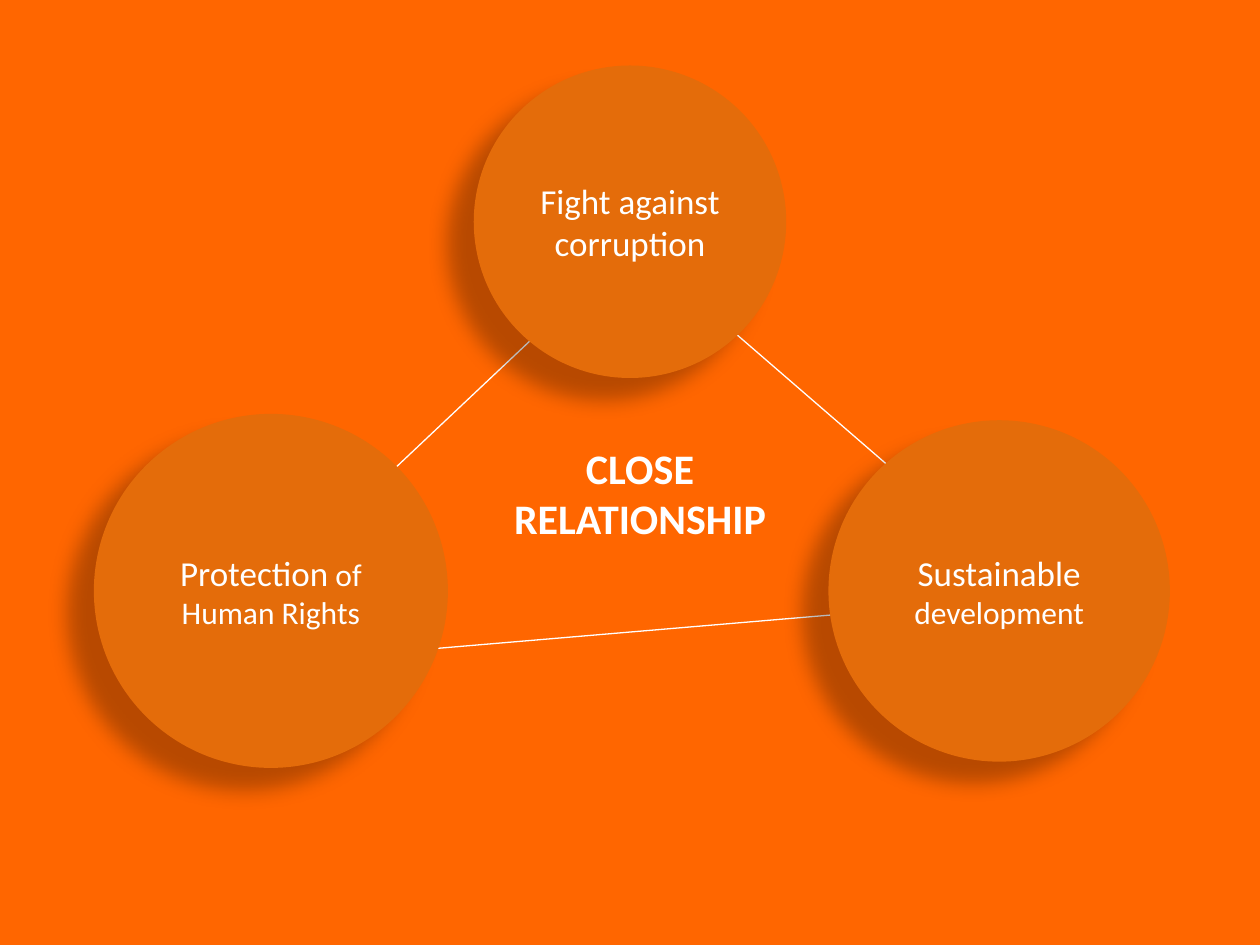
from lxml.etree import SubElement
from pptx import Presentation
from pptx.dml.color import RGBColor
from pptx.enum.shapes import MSO_CONNECTOR, MSO_SHAPE
from pptx.enum.text import MSO_ANCHOR, PP_ALIGN
from pptx.oxml.ns import qn
from pptx.util import Inches, Pt

BACKDROP = RGBColor(0xFF, 0x66, 0x00)
CIRCLE_FILL = RGBColor(0xE4, 0x6C, 0x0A)
WHITE = RGBColor(0xFF, 0xFF, 0xFF)
FONT = "Calibri"


def add_soft_shadow(shape):
    """Cast a blurred black shadow down and to the left."""
    effects = shape._element.spPr.find(qn("a:effectLst"))
    shadow = SubElement(effects, qn("a:outerShdw"), blurRad=str(Pt(11.8)),
                        dist=str(Pt(19.7)), dir=str(141 * 60000),
                        algn="ctr", rotWithShape="0")
    colour = SubElement(shadow, qn("a:srgbClr"), val="000000")
    SubElement(colour, qn("a:alpha"), val="28000")


def add_plain_shape(page, kind, left, top, width, height, fill=None):
    shape = page.shapes.add_shape(kind, left, top, width, height)
    shape.shadow.inherit = False
    shape.line.fill.background()
    if fill is None:
        shape.fill.background()
    else:
        shape.fill.solid()
        shape.fill.fore_color.rgb = fill
    return shape


def add_circle(page, centre, diameter, paragraphs, fill=None, bold=False):
    """Add a circle; each paragraph is a list of (text, size) spans."""
    left, top = (Inches(middle - diameter / 2) for middle in centre)
    circle = add_plain_shape(page, MSO_SHAPE.OVAL, left, top,
                             Inches(diameter), Inches(diameter), fill)
    frame = circle.text_frame
    frame.word_wrap = True
    frame.vertical_anchor = MSO_ANCHOR.MIDDLE
    for index, spans in enumerate(paragraphs):
        para = frame.add_paragraph() if index else frame.paragraphs[0]
        para.alignment = PP_ALIGN.CENTER
        para.font.name = FONT
        para.font.bold = bold
        para.font.color.rgb = WHITE
        for text, size in spans:
            span = para.add_run()
            span.text = text
            span.font.size = Pt(size)
    return circle


def add_link(page, start, end):
    link = page.shapes.add_connector(
        MSO_CONNECTOR.STRAIGHT, *(Inches(value) for value in start + end))
    link.line.color.rgb = WHITE
    link.line.width = Pt(0.75)
    SubElement(link._element.spPr, qn("a:effectLst"))


def main():
    deck = Presentation()
    deck.slide_width, deck.slide_height = Inches(10), Inches(7.5)
    page = deck.slides.add_slide(deck.slide_layouts[6])

    add_plain_shape(page, MSO_SHAPE.RECTANGLE, 0, 0,
                    deck.slide_width, deck.slide_height, BACKDROP)
    add_circle(page, (5.08, 3.91), 3.46, [[("CLOSE RELATIONSHIP", 24)]], bold=True)

    for start, end in [((2.24, 4.56), (4.69, 2.25)),
                       ((5.24, 2.13), (7.91, 4.44)),
                       ((2.24, 5.25), (7.91, 4.77))]:
        add_link(page, start, end)

    themes = [
        ((7.93, 4.69), 2.71, [[("Sustainable", 20), (" development", 18)]]),
        ((5, 1.76), 2.48, [[("Fight against corruption", 20)]]),
        ((2.15, 4.69), 2.81, [[("Protection", 20), (" of", 18)],
                              [("Human Rights", 18)]]),
    ]
    for centre, diameter, paragraphs in themes:
        add_soft_shadow(add_circle(page, centre, diameter, paragraphs, CIRCLE_FILL))

    deck.save("out.pptx")


if __name__ == "__main__":
    main()
